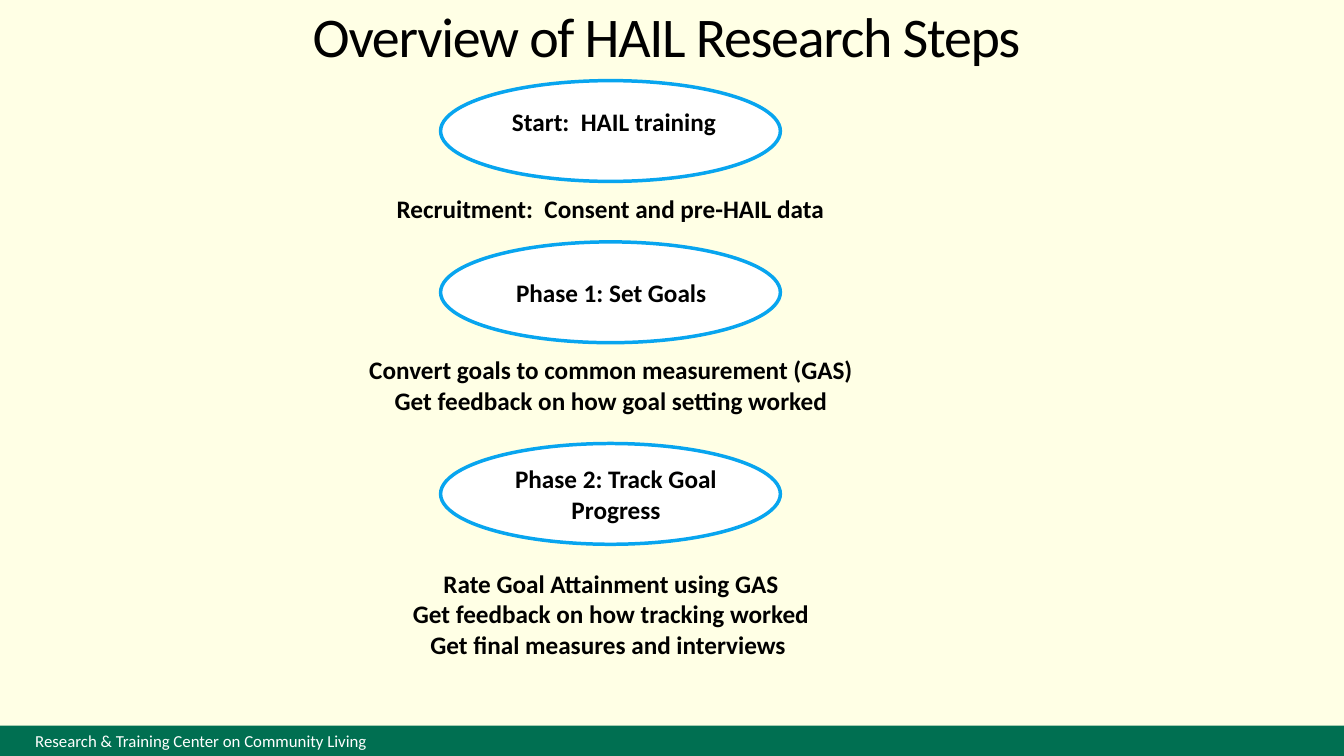
from pptx import Presentation
from pptx import util as u
from pptx.dml.color import RGBColor
from pptx.enum import shapes, text

PX = 9144  # EMU per px, 100 px to the inch
WIDTH, HEIGHT = 1333, 750
OVAL_LEFT, OVAL_WIDTH, OVAL_HEIGHT = 437, 337, 100
LEFT, CENTER = text.PP_ALIGN.LEFT, text.PP_ALIGN.CENTER

# oval top, label, label box (offset from oval, width, height), alignment,
# notes, notes box (offset from oval, width, height)
STEPS = [
    (80, "Start:  HAIL training", (61, 21, 236, 40), LEFT,
     ["Recruitment:  Consent and pre-HAIL data"], (-153, 107, 643, 40)),
    (240, "Phase 1: Set Goals", (65, 30, 237, 40), LEFT,
     ["Convert goals to common measurement (GAS)",
      "Get feedback on how goal setting worked"], (-91, 107, 520, 71)),
    (440, "Phase 2: Track Goal Progress", (61, 15, 226, 71), CENTER,
     ["Rate Goal Attainment using GAS",
      "Get feedback on how tracking worked",
      "Get final measures and interviews "], (-62, 119, 462, 101)),
]


def color(value):
    return RGBColor.from_string(value)


def px(*lengths):
    return [u.Emu(length * PX) for length in lengths]


def write(shape, lines, size, font_color="000000", bold=False, align=LEFT):
    frame = shape.text_frame
    frame.word_wrap = True
    frame.text = "\n".join(lines)
    for paragraph in frame.paragraphs:
        paragraph.alignment = align
        for run in paragraph.runs:
            run.font.name = "Calibri"
            run.font.size = u.Pt(size)
            run.font.bold = bold
            run.font.color.rgb = color(font_color)
    return frame


def add_filled(slide, kind, box, fill):
    shape = slide.shapes.add_shape(kind, *px(*box))
    shape.shadow.inherit = False
    shape.fill.solid()
    shape.fill.fore_color.rgb = color(fill)
    shape.line.fill.background()
    return shape


def add_footer(slide, box):
    bar = add_filled(slide, shapes.MSO_SHAPE.RECTANGLE, box, "006F51")
    frame = write(bar, ["Research & Training Center on Community Living"],
                  12, "FFFFFF")
    frame.margin_left = px(35)[0]
    frame.vertical_anchor = text.MSO_ANCHOR.MIDDLE


def add_title(slide, box):
    title = slide.shapes.add_textbox(*px(*box))
    frame = write(title, ["Overview of HAIL Research Steps"], 40, align=CENTER)
    frame.vertical_anchor = text.MSO_ANCHOR.MIDDLE
    paragraph = frame.paragraphs[0]
    paragraph.line_spacing = 0.85
    paragraph.runs[0].font._element.set("spc", "-90")


def add_step(slide, box, label, label_box, align, notes, notes_box):
    """Place an oval with its label, and the notes below it."""
    oval = add_filled(slide, shapes.MSO_SHAPE.OVAL, box, "FFFFFF")
    oval.line.color.rgb = color("08A5EF")
    oval.line.width = u.Pt(2.5)
    left, top = box[:2]
    for lines, (dx, dy, width, height), alignment in (
            ([label], label_box, align), (notes, notes_box, CENTER)):
        caption = slide.shapes.add_textbox(
            *px(left + dx, top + dy, width, height))
        write(caption, lines, 18, bold=True, align=alignment)


def main():
    presentation = Presentation()
    presentation.slide_width, presentation.slide_height = px(WIDTH, HEIGHT)
    slide = presentation.slides.add_slide(presentation.slide_layouts[6])
    slide.background.fill.solid()
    slide.background.fill.fore_color.rgb = color("FFFFE5")
    add_footer(slide, (0, 720, WIDTH, 30))
    add_title(slide, (97, 0, 1128, 80))
    for top, *content in STEPS:
        add_step(slide, (OVAL_LEFT, top, OVAL_WIDTH, OVAL_HEIGHT), *content)
    presentation.save("out.pptx")


if __name__ == "__main__":
    main()
